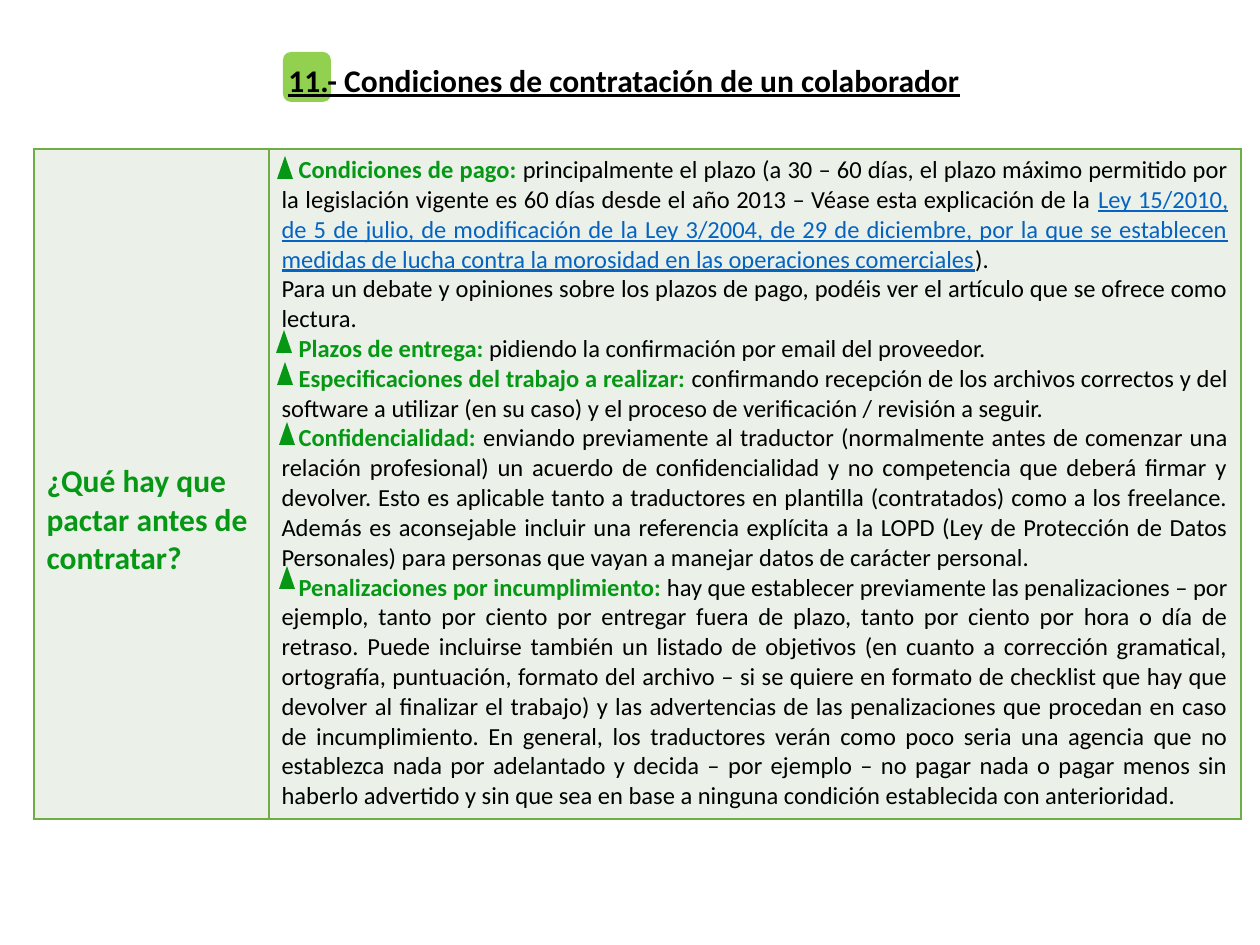
import lxml.etree
import pptx
import pptx.dml.color
import pptx.enum.shapes
import pptx.enum.text
import pptx.oxml.ns
import pptx.util

SCALE = 914400 / 126
HUES = {"ink": "000000", "green": "069814", "lime": "92D050",
        "edge": "70AD47", "pale": "EBF1E9", "link": "0563C1"}
KIND = pptx.enum.shapes.MSO_SHAPE
TERMS = [
    [("Condiciones de pago: ", "head"),
     ("principalmente el plazo (a 30 – 60 días, el plazo máximo permitido por la legislación "
      "vigente es 60 días desde el año 2013 – Véase esta explicación de la ", "body"),
     ("Ley 15/2010, de 5 de julio, de modificación de la Ley 3/2004, de 29 de diciembre, por la "
      "que se establecen medidas de lucha contra la morosidad en las operaciones comerciales", "link"),
     (").", "body")],
    [("Para un debate y opiniones sobre los plazos de pago, podéis ver el artículo que se ofrece "
      "como lectura.", "body")],
    [("Plazos de entrega:", "head"),
     (" pidiendo la confirmación por email del proveedor.", "body")],
    [("Especificaciones del trabajo a realizar: ", "head"),
     ("confirmando recepción de los archivos correctos y del software a utilizar (en su caso) y el "
      "proceso de verificación / revisión a seguir.", "body")],
    [("Confidencialidad: ", "head"),
     ("enviando previamente al traductor (normalmente antes de comenzar una relación profesional) "
      "un acuerdo de confidencialidad y no competencia que deberá firmar y devolver. Esto es "
      "aplicable tanto a traductores en plantilla (contratados) como a los freelance. Además es "
      "aconsejable incluir una referencia explícita a la LOPD (Ley de Protección de Datos "
      "Personales) para personas que vayan a manejar datos de carácter personal.", "body")],
    [("Penalizaciones por incumplimiento: ", "head"),
     ("hay que establecer previamente las penalizaciones – por ejemplo, tanto por ciento por "
      "entregar fuera de plazo, tanto por ciento por hora o día de retraso. Puede incluirse también "
      "un listado de objetivos (en cuanto a corrección gramatical, ortografía, puntuación, formato "
      "del archivo – si se quiere en formato de checklist que hay que devolver al finalizar el "
      "trabajo) y las advertencias de las penalizaciones que procedan en caso de incumplimiento. En "
      "general, los traductores verán como poco seria una agencia que no establezca nada por "
      "adelantado y decida – por ejemplo – no pagar nada o pagar menos sin haberlo advertido y sin "
      "que sea en base a ninguna condición establecida con anterioridad.", "body")],
]
MARKS = [(277, 156), (276, 330), (277, 362), (279, 422), (279, 566)]


def px(n):
    return pptx.util.Emu(round(n * SCALE))


def hue(name):
    return pptx.dml.color.RGBColor.from_string(HUES[name])


class Deck:
    """Holds the style and the current slide, and draws each kind of element."""

    font = "Calibri"
    looks = {"head": ("green", True, False), "body": ("ink", False, False),
             "link": ("link", False, True), "title": ("ink", True, True)}

    def __init__(self, show):
        self.slide = show.slides.add_slide(show.slide_layouts[6])

    def run(self, para, text, look, size):
        run = para.add_run()
        run.text = text
        face = run.font
        color, face.bold, face.underline = self.looks[look]
        face.name, face.size = self.font, pptx.util.Pt(size)
        face.color.rgb = hue(color)

    def shape(self, kind, x, y, w, h, fill):
        shape = self.slide.shapes.add_shape(kind, px(x), px(y), px(w), px(h))
        shape.shadow.inherit = False
        shape.fill.solid()
        shape.fill.fore_color.rgb = hue(fill)
        shape.line.fill.background()

    def title(self, x, y, w, h, text):
        frame = self.slide.shapes.add_textbox(px(x), px(y), px(w), px(h)).text_frame
        frame.word_wrap = True
        para = frame.paragraphs[0]
        para.line_spacing, para.space_after = 1.07, pptx.util.Pt(8)
        self.run(para, text, "title", 18)

    def table(self, x, y, cols, h):
        grid = self.slide.shapes.add_table(1, len(cols), px(x), px(y), px(sum(cols)), px(h)).table
        grid.first_row = grid.horz_banding = False
        for col, wide in zip(grid.columns, cols):
            col.width = px(wide)
        for cell in grid.rows[0].cells:
            self.edge(cell)
            cell.fill.solid()
            cell.fill.fore_color.rgb = hue("pale")
        return grid

    def edge(self, cell):
        name = pptx.oxml.ns.qn
        props = cell._tc.get_or_add_tcPr()
        for side in ("a:lnL", "a:lnR", "a:lnT", "a:lnB"):
            line = lxml.etree.SubElement(props, name(side), w=str(pptx.util.Pt(1)))
            fill = lxml.etree.SubElement(line, name("a:solidFill"))
            lxml.etree.SubElement(fill, name("a:srgbClr"), val=HUES["edge"])

    def terms(self, cell, terms, indent):
        frame = cell.text_frame
        for i, parts in enumerate(terms):
            para = frame.add_paragraph() if i else frame.paragraphs[0]
            para.alignment = pptx.enum.text.PP_ALIGN.JUSTIFY
            if parts[0][1] == "head":
                props = para._p.get_or_add_pPr()
                props.set("marL", "0")
                props.set("indent", str(px(indent)))
            for text, look in parts:
                self.run(para, text, look, 14)


def main():
    show = pptx.Presentation()
    show.slide_width, show.slide_height = px(1260), px(945)
    deck = Deck(show)
    deck.shape(KIND.ROUNDED_RECTANGLE, 283, 52, 48, 50, "lime")
    deck.title(276, 52, 850, 54, "11.- Condiciones de contratación de un colaborador")
    grid = deck.table(34, 149, (235, 972), 670)
    ask, reply = grid.rows[0].cells
    ask.margin_top = px(314)
    deck.run(ask.text_frame.paragraphs[0], "¿Qué hay que pactar antes de contratar?", "head", 18)
    deck.terms(reply, TERMS, 17)
    for x, y in MARKS:
        deck.shape(KIND.ISOSCELES_TRIANGLE, x, y, 16, 23, "green")
    show.save("out.pptx")


if __name__ == "__main__":
    main()
